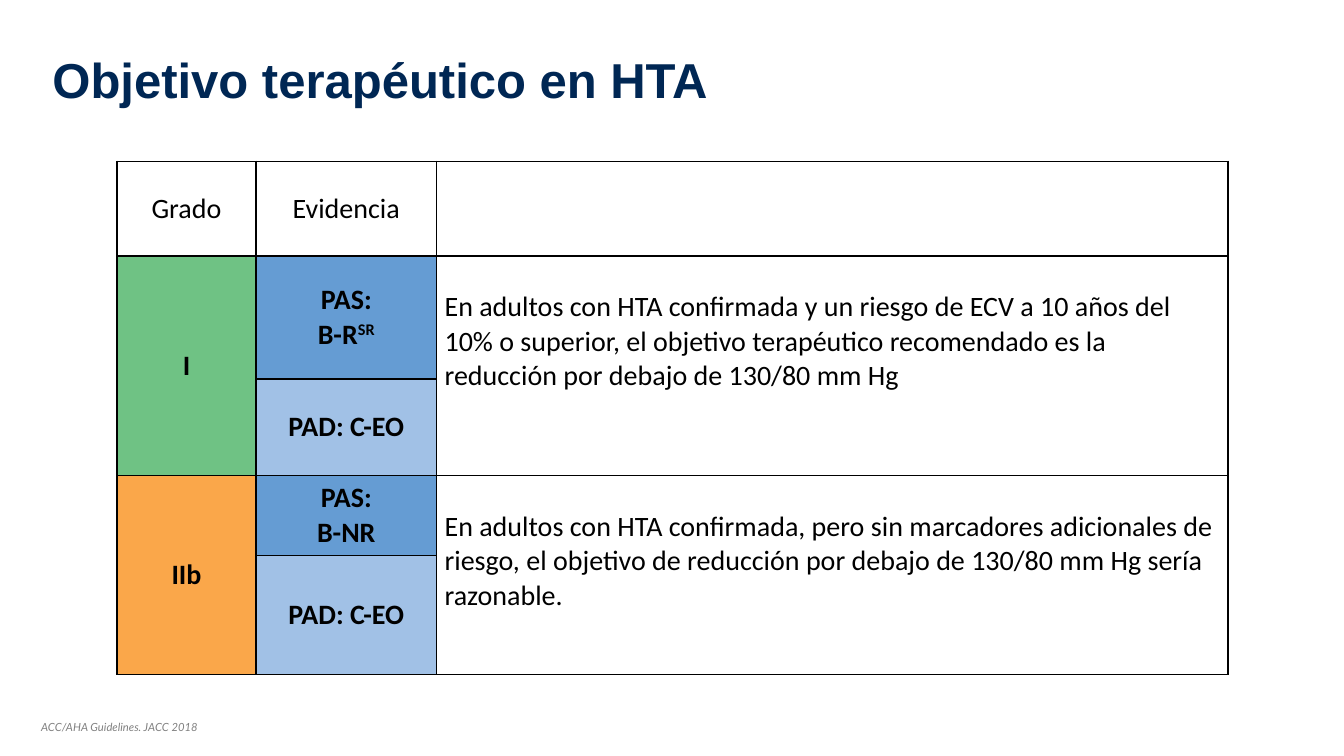
"""Build the slide on the therapeutic goal in hypertension."""
from lxml.etree import SubElement
from pptx import Presentation
from pptx.dml.color import RGBColor
from pptx.enum.text import MSO_ANCHOR as Anchor, PP_ALIGN as Align
from pptx.oxml.ns import qn
from pptx.util import Inches, Pt

TITLE = "Objetivo terapéutico en HTA"
SOURCE = "ACC/AHA Guidelines. JACC 2018"
HEADERS = ["Grado", "Evidencia", ""]
GRADES = [
    ("I", "6FC284", [["PAS:", "B-R"], ["PAD: C-EO"]], "SR",
     "En adultos con HTA confirmada y un riesgo de ECV a 10 años del 10% o superior, "
     "el objetivo terapéutico recomendado es la reducción por debajo de 130/80 mm Hg"),
    ("IIb", "FAA74A", [["PAS:", "B-NR"], ["PAD: C-EO"]], "",
     "En adultos con HTA confirmada, pero sin marcadores adicionales de riesgo, "
     "el objetivo de reducción por debajo de 130/80 mm Hg sería razonable."),
]
EVIDENCE_FILLS = ["659CD3", "A1C1E6"]
COLUMN_WIDTHS = [1.38, 1.79, 7.85]
ROW_HEIGHTS = [0.94, 1.22, 0.96, 0.79, 1.18]
LINE_HEIGHT = 0.34


def color(value):
    return RGBColor.from_string(value)


def set_font(font, name, size, value, bold=False, italic=False):
    font.name, font.size, font.bold, font.italic = name, Pt(size), bold, italic
    font.color.rgb = color(value)


def add_borders(cell):
    properties = cell._tc.get_or_add_tcPr()
    for side in ("lnL", "lnR", "lnT", "lnB"):
        line = SubElement(properties, qn(f"a:{side}"), w=str(Pt(1)))
        fill = SubElement(line, qn("a:solidFill"))
        SubElement(fill, qn("a:srgbClr"), val="000000")


def fill_cell(cell, lines, fill="FFFFFF", bold=False, align=Align.CENTER,
              anchor=Anchor.MIDDLE, top=0):
    cell.fill.solid()
    cell.fill.fore_color.rgb = color(fill)
    cell.margin_left = cell.margin_right = Inches(0.08)
    cell.margin_top, cell.margin_bottom = Inches(top), 0
    cell.vertical_anchor = anchor
    cell.text = "\n".join(lines)
    for paragraph in cell.text_frame.paragraphs:
        paragraph.alignment = align
        set_font(paragraph.font, "Calibri", 20, "000000", bold)


def add_title(slide):
    title = slide.shapes.title
    title.left, title.top = Inches(0.42), Inches(0.09)
    title.width, title.height = Inches(10.13), Inches(1.45)
    frame = title.text_frame
    frame.text = TITLE
    frame.word_wrap = True
    frame.vertical_anchor = Anchor.MIDDLE
    paragraph = frame.paragraphs[0]
    paragraph.alignment = Align.LEFT
    paragraph.line_spacing = 0.9
    set_font(paragraph.font, "Arial", 35, "002754", bold=True)


def add_grades(slide):
    table = slide.shapes.add_table(
        len(ROW_HEIGHTS), len(COLUMN_WIDTHS), Inches(1.16), Inches(1.6),
        Inches(sum(COLUMN_WIDTHS)), Inches(sum(ROW_HEIGHTS))).table
    table.first_row = table.horz_banding = False
    for column, width in zip(table.columns, COLUMN_WIDTHS):
        column.width = Inches(width)
    for row, height in zip(table.rows, ROW_HEIGHTS):
        row.height = Inches(height)
    for cell in table.iter_cells():
        add_borders(cell)
    for index, header in enumerate(HEADERS):
        fill_cell(table.cell(0, index), [header])
    for index, (grade, fill, evidence, superscript, advice) in enumerate(GRADES):
        first = 1 + 2 * index
        for column in (0, 2):
            table.cell(first, column).merge(table.cell(first + 1, column))
        fill_cell(table.cell(first, 0), [grade], fill, bold=True)
        fill_cell(table.cell(first, 2), [advice], align=Align.LEFT,
                  anchor=Anchor.TOP, top=LINE_HEIGHT)
        for offset, (lines, shade) in enumerate(zip(evidence, EVIDENCE_FILLS)):
            fill_cell(table.cell(first + offset, 1), lines, shade, bold=True)
        if superscript:
            run = table.cell(first, 1).text_frame.paragraphs[-1].add_run()
            run.text = superscript
            run._r.get_or_add_rPr().set("baseline", "30000")


def add_source(slide):
    box = slide.shapes.add_textbox(Inches(0.31), Inches(7.1), Inches(1.8), Inches(0.24))
    frame = box.text_frame
    frame.word_wrap = False
    frame.text = SOURCE
    set_font(frame.paragraphs[0].font, "Lato", 8, "808080", italic=True)


def main():
    presentation = Presentation()
    presentation.slide_width, presentation.slide_height = Inches(13.33), Inches(7.5)
    slide = presentation.slides.add_slide(presentation.slide_layouts[5])
    add_title(slide)
    add_grades(slide)
    add_source(slide)
    presentation.save("out.pptx")


if __name__ == "__main__":
    main()
